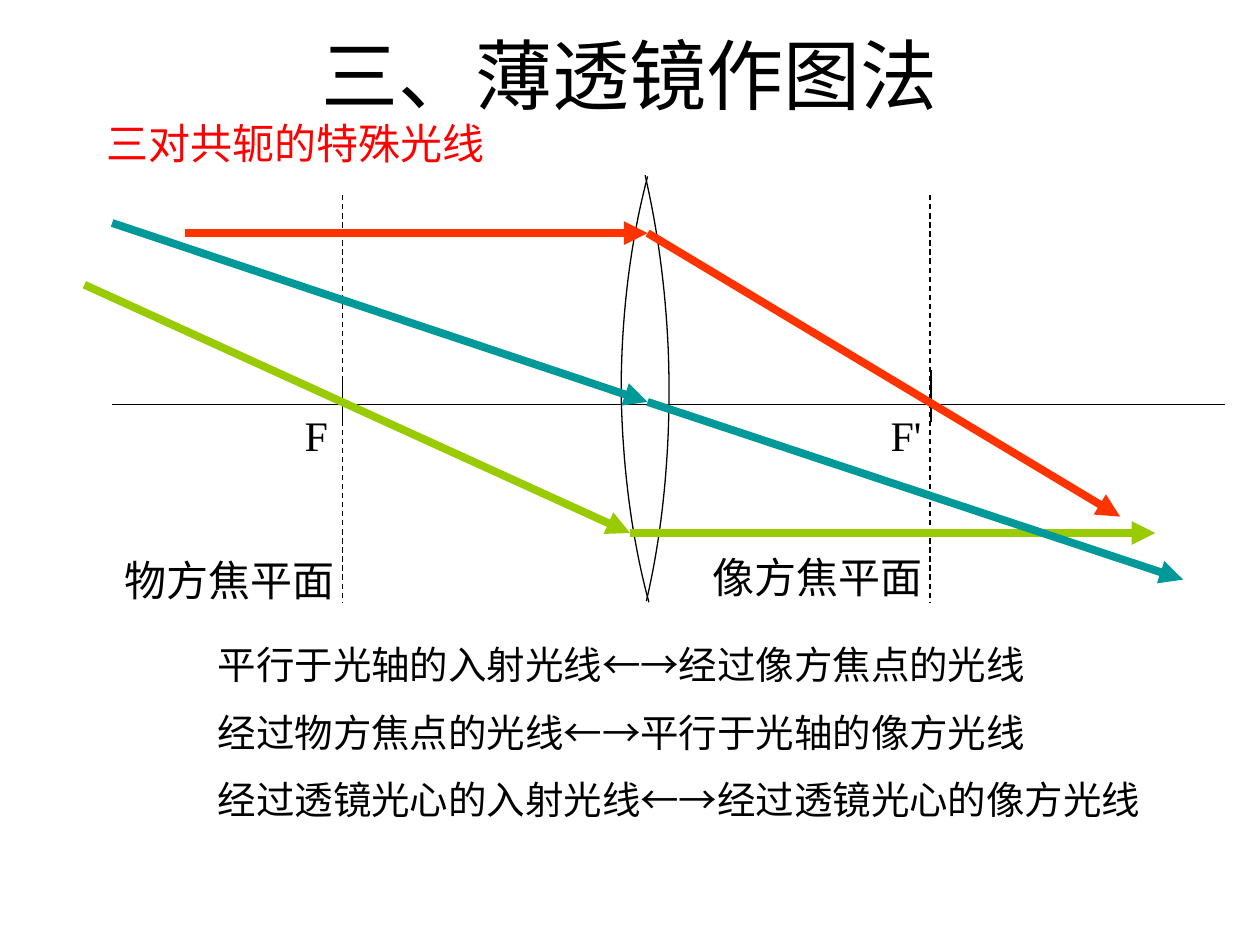
"""Build the thin-lens ray construction slide."""
from lxml import etree
from pptx import Presentation
from pptx.dml.color import RGBColor
from pptx.enum.dml import MSO_LINE
from pptx.enum.shapes import MSO_CONNECTOR
from pptx.enum.text import MSO_ANCHOR, MSO_AUTO_SIZE, PP_ALIGN
from pptx.oxml.ns import qn
from pptx.util import Pt

PX = 9144
STRAIGHT = MSO_CONNECTOR.STRAIGHT
DASH = MSO_LINE.DASH
MIDDLE = MSO_ANCHOR.MIDDLE
CENTER = PP_ALIGN.CENTER
FIT_SHAPE = MSO_AUTO_SIZE.SHAPE_TO_FIT_TEXT
NO_FIT = MSO_AUTO_SIZE.NONE
CJK = "Noto Sans CJK SC"
SERIF = "Times New Roman"
BLACK, RED = "000000", "FF0000"
ORANGE, GREEN, TEAL = "FF3300", "99CC00", "009999"


def write(box, text, size, font, color):
    box.text_frame.text = text
    span = box.text_frame.paragraphs[0].runs[0]
    span.font.size = Pt(size)
    span.font.name = font
    span.font.color.rgb = RGBColor.from_string(color)
    east_asian = etree.SubElement(span.font._element, qn("a:ea"))
    east_asian.set("typeface", CJK)


def draw_line(points, color=BLACK, width=0.75):
    line = page.shapes.add_connector(STRAIGHT, *[value * PX for value in points])
    line.line.color.rgb = RGBColor.from_string(color)
    line.line.width = Pt(width)
    etree.SubElement(line._element.spPr, qn("a:effectLst"))
    return line


deck = Presentation()
deck.slide_width, deck.slide_height = 1000 * PX, 750 * PX
page = deck.slides.add_slide(deck.slide_layouts[5])

for x in (738, 272):
    draw_line((x, 155, x, 478)).line.dash_style = DASH

title = page.shapes.title
title.left, title.top, title.width, title.height = 50 * PX, -4 * PX, 900 * PX, 125 * PX
write(title, "三、薄透镜作图法", 44, "Arial", BLACK)
title.text_frame.vertical_anchor = MIDDLE
title.text_frame.auto_size = NO_FIT
title.text_frame.paragraphs[0].alignment = CENTER
title.text_frame.paragraphs[0].space_before = Pt(18)

draw_line((89, 321, 972, 321))

lens_sides = [
    [(512, 139), (524, 191), (531, 250), (531, 310), (531, 368), (525, 426), (513, 477)],
    [(515, 478), (501, 426), (494, 369), (493, 311), (493, 252), (500, 193), (514, 140)],
]
STEPS = 20
for side in lens_sides:
    outline = []
    for start in (0, 3):
        for step in range(1, STEPS + 1):
            t = step / STEPS
            weights = ((1 - t) ** 3, 3 * t * (1 - t) ** 2, 3 * t * t * (1 - t), t ** 3)
            controls = side[start:start + 4]
            outline.append([
                round(PX * sum(w * point[axis] for w, point in zip(weights, controls)))
                for axis in (0, 1)
            ])
    builder = page.shapes.build_freeform(side[0][0] * PX, side[0][1] * PX)
    builder.add_line_segments(outline, close=False)
    surface = builder.convert_to_shape()
    surface.shadow.inherit = False
    surface.fill.background()
    surface.line.color.rgb = RGBColor.from_string(BLACK)
    surface.line.width = Pt(0.75)

for x, top in ((272, 302), (739, 294)):
    draw_line((x, top, x, 335))

rays = [
    ((147, 185, 514, 185), ORANGE),
    ((514, 185, 889, 410), ORANGE),
    ((67, 226, 500, 423), GREEN),
    ((500, 423, 917, 423), GREEN),
    ((89, 177, 514, 319), TEAL),
    ((514, 319, 939, 460), TEAL),
]
for points, color in rays:
    ray = draw_line(points, color, 4.5)
    arrow = etree.SubElement(ray.line._get_or_add_ln(), qn("a:tailEnd"))
    arrow.set("type", "triangle")

labels = [
    ("三对共轭的特殊光线", 75, 88, 323, 50, 24, CJK, RED),
    ("F", 232, 320, 39, 50, 24, SERIF, BLACK),
    ("F'", 697, 320, 45, 50, 24, SERIF, BLACK),
    ("平行于光轴的入射光线←→经过像方焦点的光线", 163, 504, 662, 47, 22, CJK, BLACK),
    ("经过物方焦点的光线←→平行于光轴的像方光线", 163, 558, 662, 47, 22, CJK, BLACK),
    ("经过透镜光心的入射光线←→经过透镜光心的像方光线", 163, 611, 755, 47, 22, CJK, BLACK),
    ("物方焦平面", 89, 435, 200, 50, 24, CJK, BLACK),
    ("像方焦平面", 556, 433, 200, 50, 24, CJK, BLACK),
]
for text, left, top, width, height, size, font, color in labels:
    label = page.shapes.add_textbox(left * PX, top * PX, width * PX, height * PX)
    label.text_frame.word_wrap = text.endswith("焦平面")
    label.text_frame.auto_size = FIT_SHAPE
    write(label, text, size, font, color)

deck.save("out.pptx")
